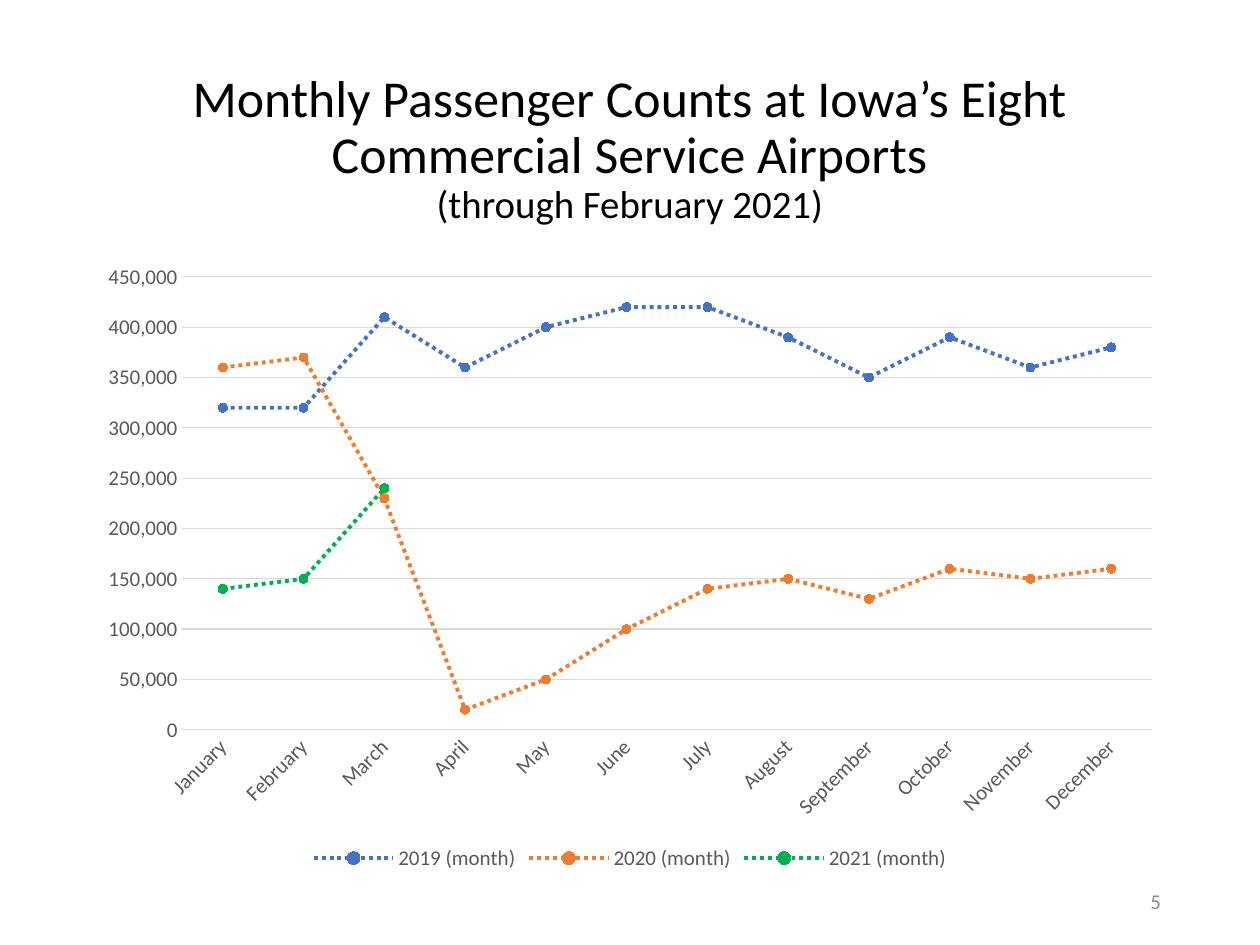
from dataclasses import dataclass

from pptx import Presentation
from pptx.chart.data import CategoryChartData
from pptx.dml.color import RGBColor
from pptx.enum.chart import XL_CHART_TYPE, XL_LEGEND_POSITION, XL_MARKER_STYLE, XL_TICK_MARK
from pptx.enum.dml import MSO_LINE
from pptx.enum.text import MSO_ANCHOR, MSO_AUTO_SIZE, PP_ALIGN
from pptx.util import Pt

LINE_MARKERS = XL_CHART_TYPE.LINE_MARKERS
BOTTOM_LEGEND = XL_LEGEND_POSITION.BOTTOM
CIRCLE = XL_MARKER_STYLE.CIRCLE
NO_TICK = XL_TICK_MARK.NONE
DOTTED = MSO_LINE.ROUND_DOT
TITLE_ONLY = 5


@dataclass(frozen=True)
class Theme:
    """Holds the colours, font and type sizes of the deck."""
    font: str = "Calibri"
    ink: str = "000000"
    label: str = "595959"
    grid: str = "D9D9D9"
    muted: str = "8C8C8C"
    title_size: float = 29.6
    subtitle_size: float = 22.2
    label_size: float = 12


THEME = Theme()
TITLE_LINES = (
    ("Monthly Passenger Counts at Iowa’s Eight Commercial Service Airports", THEME.title_size),
    ("(through February 2021)", THEME.subtitle_size),
)
MONTHS = ("January", "February", "March", "April", "May", "June", "July",
          "August", "September", "October", "November", "December")
PASSENGERS = (
    ("2019 (month)", "4472C4", (320000, 320000, 410000, 360000, 400000, 420000,
                                420000, 390000, 350000, 390000, 360000, 380000)),
    ("2020 (month)", "ED7D31", (360000, 370000, 230000, 20000, 50000, 100000,
                                140000, 150000, 130000, 160000, 150000, 160000)),
    ("2021 (month)", "00B050", (140000, 150000, 240000) + (None,) * 9),
)


def style_font(font, size, color):
    """Set the theme font with a size and colour."""
    font.name = THEME.font
    font.size = Pt(size)
    font.bold = False
    font.color.rgb = RGBColor.from_string(color)


def style_line(line, width, color):
    """Set the colour and width of a line."""
    line.color.rgb = RGBColor.from_string(color)
    line.width = Pt(width)


def place(shape, box):
    """Move a shape to a box of left, top, width and height in points."""
    shape.left, shape.top, shape.width, shape.height = map(Pt, box)


def write_lines(shape, lines, color, align, anchor, spacing=1.0):
    """Write one paragraph for each pair of text and size."""
    frame = shape.text_frame
    frame.word_wrap = True
    frame.auto_size = MSO_AUTO_SIZE.NONE
    frame.vertical_anchor = anchor
    for index, (text, size) in enumerate(lines):
        para = frame.add_paragraph() if index else frame.paragraphs[0]
        para.alignment = align
        para.line_spacing = spacing
        span = para.add_run()
        span.text = text
        style_font(span.font, size, color)


def add_title(page, box):
    """Fill the title placeholder with the title and its subtitle."""
    title = page.shapes.title
    place(title, box)
    write_lines(title, TITLE_LINES, THEME.ink, PP_ALIGN.CENTER, MSO_ANCHOR.BOTTOM, 0.9)


def style_axes(chart):
    """Format the month axis and the passenger axis."""
    months, counts = chart.category_axis, chart.value_axis
    for axis in (months, counts):
        axis.major_tick_mark = axis.minor_tick_mark = NO_TICK
        style_font(axis.tick_labels.font, THEME.label_size, THEME.label)
    style_line(months.format.line, 0.75, THEME.grid)
    chart.element.xpath(".//c:catAx/c:txPr/a:bodyPr")[0].set("rot", "-2700000")
    counts.minimum_scale, counts.maximum_scale, counts.major_unit = 0, 450000, 50000
    counts.tick_labels.number_format = "#,##0"
    counts.tick_labels.number_format_is_linked = False
    counts.format.line.fill.background()
    style_line(counts.major_gridlines.format.line, 0.75, THEME.grid)


def style_series(series, color):
    """Give a series a dotted line and round markers in one colour."""
    series.smooth = False
    style_line(series.format.line, 2.25, color)
    series.format.line.dash_style = DOTTED
    marker = series.marker
    marker.style, marker.size = CIRCLE, 5
    marker.format.fill.solid()
    marker.format.fill.fore_color.rgb = RGBColor.from_string(color)
    style_line(marker.format.line, 0.75, color)


def add_passenger_chart(page, box):
    """Add the line chart of monthly passengers by year."""
    data = CategoryChartData(number_format="#,##0")
    data.categories = MONTHS
    for name, _, values in PASSENGERS:
        data.add_series(name, values)
    chart = page.shapes.add_chart(LINE_MARKERS, *map(Pt, box), data).chart
    style_font(chart.font, THEME.label_size, THEME.label)
    chart.has_title = False
    chart.has_legend = True
    chart.legend.position = BOTTOM_LEGEND
    chart.legend.include_in_layout = False
    style_font(chart.legend.font, THEME.label_size, THEME.label)
    plot = chart.plots[0]
    plot.vary_by_categories = False
    style_axes(chart)
    for series, (_, color, _) in zip(plot.series, PASSENGERS):
        style_series(series, color)


def add_page_number(page, box):
    """Add the page number at the lower right."""
    number = page.shapes.add_textbox(*map(Pt, box))
    write_lines(number, (("5", THEME.label_size),), THEME.muted, PP_ALIGN.RIGHT, MSO_ANCHOR.MIDDLE)


def main():
    """Build the deck and save it."""
    deck = Presentation()
    deck.slide_width, deck.slide_height = Pt(720), Pt(540)
    page = deck.slides.add_slide(deck.slide_layouts[TITLE_ONLY])
    margin, width = 49.5, 621
    add_title(page, (margin, 28.75, width, 104.4))
    add_passenger_chart(page, (margin, 144, width, 356.4))
    add_page_number(page, (margin + width - 162, 500.5, 162, 28.75))
    deck.save("out.pptx")


if __name__ == "__main__":
    main()
